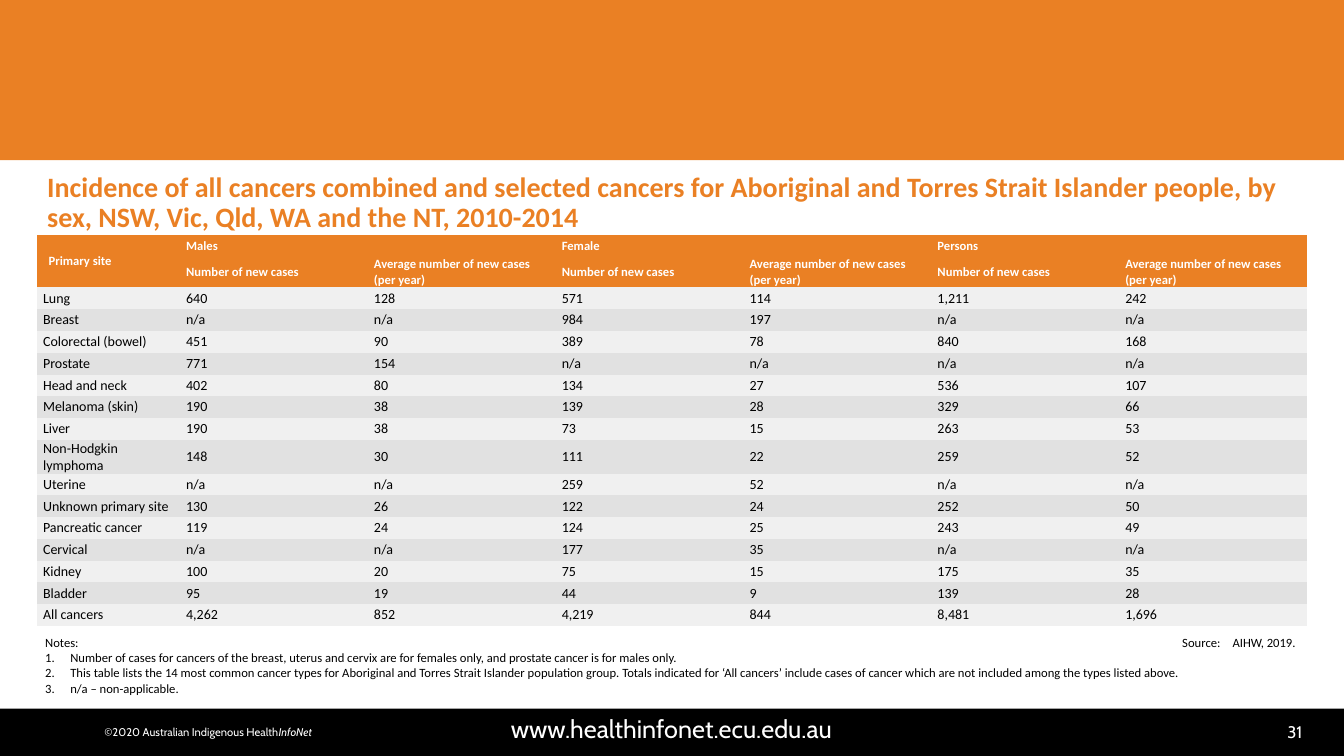
from dataclasses import dataclass

from lxml import etree
from pptx import Presentation
from pptx.dml.color import RGBColor
from pptx.enum.shapes import MSO_SHAPE
from pptx.enum.text import MSO_ANCHOR, MSO_AUTO_SIZE, PP_ALIGN
from pptx.oxml.ns import qn
from pptx.util import Pt

RECTANGLE = MSO_SHAPE.RECTANGLE
TOP, MIDDLE = MSO_ANCHOR.TOP, MSO_ANCHOR.MIDDLE
LEFT, CENTER, RIGHT = PP_ALIGN.LEFT, PP_ALIGN.CENTER, PP_ALIGN.RIGHT
NO_FIT = MSO_AUTO_SIZE.NONE
TITLE_ONLY = 5
PLAIN_TABLE = "{2D5ABB26-0587-4C30-8999-92F81FD0307C}"


@dataclass(frozen=True)
class Theme:
    """Colours, fonts and type sizes of the deck."""
    orange: str = "EA8024"
    black: str = "000000"
    white: str = "FFFFFF"
    bands: tuple = ("F0F0F0", "E1E1E1")
    body_font: str = "Calibri"
    footer_font: str = "Cabin"
    title: int = 20
    address: int = 18
    number: int = 12
    data: int = 10
    small: int = 9
    copyright: int = 8


@dataclass(frozen=True)
class Box:
    """A rectangle in points."""
    left: float
    top: float
    width: float
    height: float

    def lengths(self):
        """Return the four sides as lengths."""
        return [Pt(side) for side in (self.left, self.top, self.width, self.height)]

    def inner(self, left, top, width, height):
        """Return a box placed relative to this one."""
        return Box(self.left + left, self.top + top, width, height)


THEME = Theme()
PAGE = Box(0, 0, 960, 540)
TITLE = ("Incidence of all cancers combined and selected cancers for Aboriginal and Torres "
         "Strait Islander people, by sex, NSW, Vic, Qld, WA and the NT, 2010-2014")
GROUPS = ["Males", "Female", "Persons"]
MEASURES = ["Number of new cases", "Average number of new cases (per year)"]
CASES = [
    ("Lung", "640", "128", "571", "114", "1,211", "242"),
    ("Breast", "n/a", "n/a", "984", "197", "n/a", "n/a"),
    ("Colorectal (bowel)", "451", "90", "389", "78", "840", "168"),
    ("Prostate", "771", "154", "n/a", "n/a", "n/a", "n/a"),
    ("Head and neck", "402", "80", "134", "27", "536", "107"),
    ("Melanoma (skin)", "190", "38", "139", "28", "329", "66"),
    ("Liver", "190", "38", "73", "15", "263", "53"),
    ("Non-Hodgkin lymphoma", "148", "30", "111", "22", "259", "52"),
    ("Uterine", "n/a", "n/a", "259", "52", "n/a", "n/a"),
    ("Unknown primary site", "130", "26", "122", "24", "252", "50"),
    ("Pancreatic cancer", "119", "24", "124", "25", "243", "49"),
    ("Cervical", "n/a", "n/a", "177", "35", "n/a", "n/a"),
    ("Kidney", "100", "20", "75", "15", "175", "35"),
    ("Bladder", "95", "19", "44", "9", "139", "28"),
    ("All cancers", "4,262", "852", "4,219", "844", "8,481", "1,696"),
]
NOTES = [
    "Number of cases for cancers of the breast, uterus and cervix are for females only, "
    "and prostate cancer is for males only.",
    "This table lists the 14 most common cancer types for Aboriginal and Torres Strait Islander "
    "population group. Totals indicated for ‘All cancers’ include cases of cancer which are not "
    "included among the types listed above.",
    "n/a – non-applicable.",
]


def apply(target, values):
    """Set attributes from a dict of format values."""
    for name, value in values.items():
        setattr(target, name, value)


def write(para, text, size, color, font=THEME.body_font, **extra):
    """Add a formatted span of text to a paragraph."""
    span = para.add_run()
    span.text = text
    apply(span.font, {"size": Pt(size), "name": font, **extra})
    span.font.color.rgb = RGBColor.from_string(color)


def add_band(page, box, color):
    """Draw a plain filled band."""
    band = page.shapes.add_shape(RECTANGLE, *box.lengths())
    band.shadow.inherit = False
    band.fill.solid()
    band.fill.fore_color.rgb = RGBColor.from_string(color)
    band.line.fill.background()


def add_text_frame(page, box, anchor=TOP, wrap=True):
    """Add a text box and return its frame."""
    frame = page.shapes.add_textbox(*box.lengths()).text_frame
    apply(frame, {"word_wrap": wrap, "vertical_anchor": anchor})
    return frame


def add_title(page, box):
    """Fill and place the title placeholder."""
    title = page.shapes.title
    apply(title, dict(zip(("left", "top", "width", "height"), box.lengths())))
    apply(title.text_frame, {"word_wrap": True, "vertical_anchor": MIDDLE, "auto_size": NO_FIT})
    para = title.text_frame.paragraphs[0]
    apply(para, {"alignment": LEFT, "line_spacing": 0.9})
    write(para, TITLE, THEME.title, THEME.orange, bold=True)


def fill_cell(cell, text, fill, size, color, bold, left=4.3):
    """Format one table cell and write its text."""
    apply(cell, {"margin_left": Pt(left), "margin_right": Pt(4.3), "margin_top": 0,
                 "margin_bottom": 0, "vertical_anchor": MIDDLE})
    cell.fill.solid()
    cell.fill.fore_color.rgb = RGBColor.from_string(fill)
    para = cell.text_frame.paragraphs[0]
    para.space_after = Pt(5)
    write(para, text, size, color, bold=bold)


def add_cases_table(page, box):
    """Draw the table of new cases by primary site and sex."""
    columns = 1 + len(GROUPS) * len(MEASURES)
    rows = 2 + len(CASES)
    frame = page.shapes.add_table(rows, columns, *box.lengths())
    table = frame.table
    apply(table, {"first_row": False, "horz_banding": False})
    next(frame._element.iter(qn("a:tableStyleId"))).text = PLAIN_TABLE
    site_width = 102.2
    for index, column in enumerate(table.columns):
        column.width = Pt((box.width - site_width) / (columns - 1) if index else site_width)
    for row in table.rows:
        row.height = Pt(box.height / rows)
    header = (THEME.orange, THEME.small, THEME.white, True)
    table.cell(0, 0).merge(table.cell(1, 0))
    fill_cell(table.cell(0, 0), "Primary site", *header, left=8.3)
    for index, group in enumerate(GROUPS):
        first = 1 + index * len(MEASURES)
        table.cell(0, first).merge(table.cell(0, first + len(MEASURES) - 1))
        fill_cell(table.cell(0, first), group, *header)
        for offset, measure in enumerate(MEASURES):
            fill_cell(table.cell(1, first + offset), measure, *header)
    for index, record in enumerate(CASES):
        for column, value in enumerate(record):
            fill_cell(table.cell(index + 2, column), value, THEME.bands[index % 2],
                      THEME.data, THEME.black, False)


def add_notes(page, box):
    """Write the numbered notes and the source at their right."""
    frame = add_text_frame(page, box)
    write(frame.paragraphs[0], "Notes:", THEME.small, THEME.black)
    for note in NOTES:
        para = frame.add_paragraph()
        properties = para._p.get_or_add_pPr()
        properties.set("marL", str(Pt(18)))
        properties.set("indent", str(Pt(-18)))
        etree.SubElement(properties, qn("a:buAutoNum"), type="arabicPeriod")
        write(para, note, THEME.small, THEME.black)
    source_box = box.inner(box.width - 95, 0, 97, 18)
    para = add_text_frame(page, source_box, wrap=False).paragraphs[0]
    tabs = etree.SubElement(para._p.get_or_add_pPr(), qn("a:tabLst"))
    etree.SubElement(tabs, qn("a:tab"), pos=str(Pt(36)), algn="l")
    write(para, "Source:\tAIHW, 2019.", THEME.small, THEME.black)


def add_footer(page, box):
    """Draw the footer band with copyright, web address and page number."""
    add_band(page, box, THEME.black)
    items = [
        (box.inner(860.4, 5.8, 77, 21.6), RIGHT, True, THEME.number, ["31"]),
        (box.inner(44.6, 0, 870, 28), CENTER, True, THEME.address,
         ["www.healthinfonet.ecu.edu.au"]),
        (box.inner(66.2, 7.9, 165, 17.3), CENTER, False, THEME.copyright,
         ["©2020 Australian Indigenous Health", "InfoNet"]),
    ]
    for place, alignment, wrap, size, parts in items:
        para = add_text_frame(page, place, MIDDLE, wrap).paragraphs[0]
        para.alignment = alignment
        for index, part in enumerate(parts):
            write(para, part, size, THEME.white, THEME.footer_font, italic=index > 0)


def main():
    """Build and save the deck."""
    deck = Presentation()
    apply(deck, {"slide_width": Pt(PAGE.width), "slide_height": Pt(PAGE.height)})
    page = deck.slides.add_slide(deck.slide_layouts[TITLE_ONLY])
    add_band(page, PAGE.inner(0, 0, PAGE.width, 114.5), THEME.orange)
    add_footer(page, PAGE.inner(0, 506.2, PAGE.width, 33.8))
    add_title(page, PAGE.inner(26.5, 118.8, 907.2, 52.6))
    add_cases_table(page, PAGE.inner(26.5, 168, 907.2, 265))
    add_notes(page, PAGE.inner(25.2, 450, 907.2, 52.6))
    deck.save("out.pptx")


if __name__ == "__main__":
    main()
